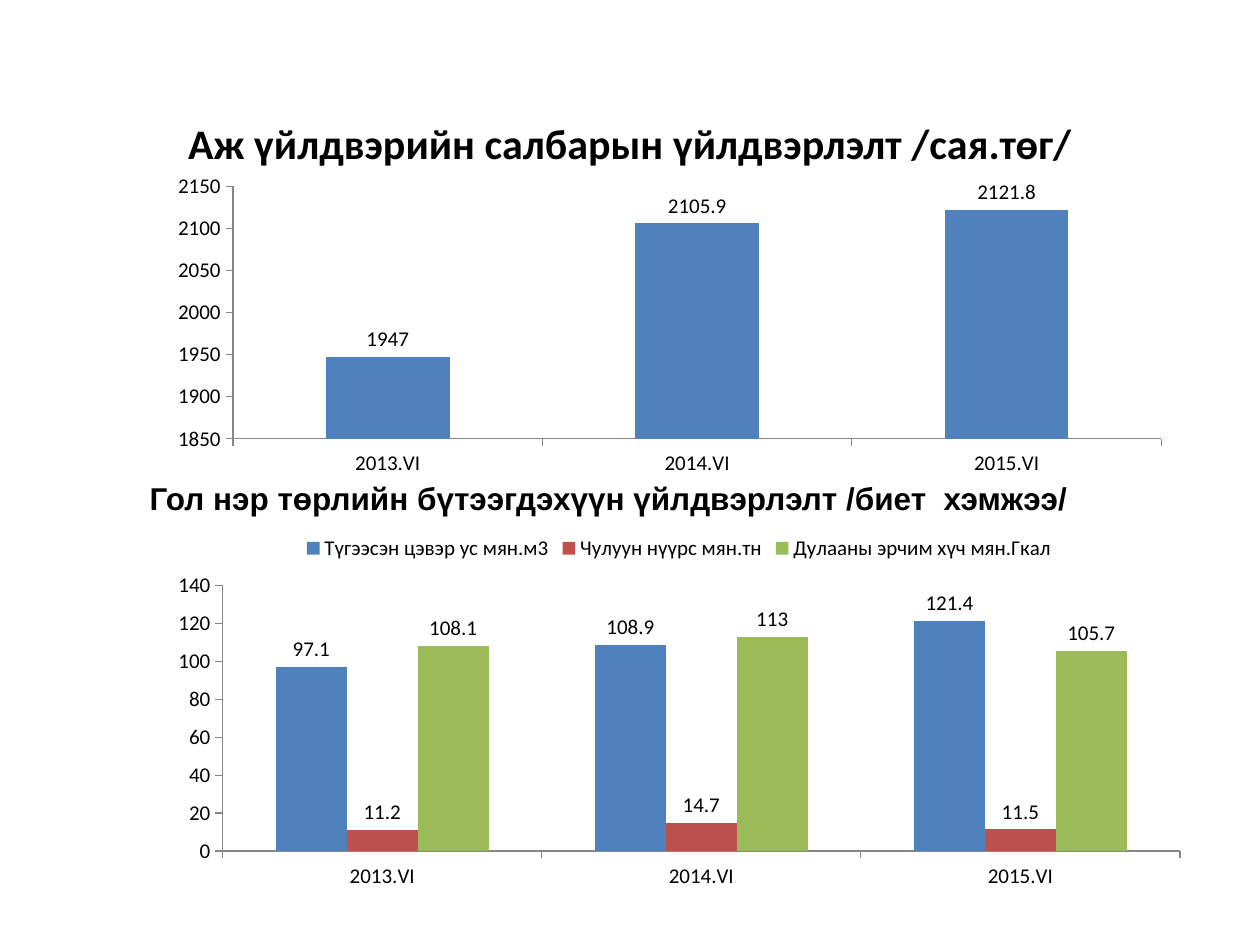
from dataclasses import dataclass

from pptx import Presentation
from pptx.chart.data import CategoryChartData
from pptx.dml.color import RGBColor
from pptx.enum.chart import (XL_CHART_TYPE, XL_LABEL_POSITION,
                             XL_LEGEND_POSITION, XL_TICK_MARK)
from pptx.enum.text import MSO_ANCHOR, PP_ALIGN
from pptx.util import Inches, Pt

COLUMNS = XL_CHART_TYPE.COLUMN_CLUSTERED
OUTSIDE_END = XL_LABEL_POSITION.OUTSIDE_END
LEGEND_TOP = XL_LEGEND_POSITION.TOP
TICK_OUT, TICK_NONE = XL_TICK_MARK.OUTSIDE, XL_TICK_MARK.NONE
TOP, MIDDLE = MSO_ANCHOR.TOP, MSO_ANCHOR.MIDDLE
LEFT, CENTER = PP_ALIGN.LEFT, PP_ALIGN.CENTER

BLACK = RGBColor(0x00, 0x00, 0x00)
AXIS_GRAY = RGBColor(0x86, 0x86, 0x86)
BLUE = RGBColor(0x4F, 0x81, 0xBD)
RED = RGBColor(0xC0, 0x50, 0x4D)
GREEN = RGBColor(0x9B, 0xBB, 0x59)

SLIDE_W, SLIDE_H = Inches(10), Inches(7.5)
PERIODS = ("2013.VI", "2014.VI", "2015.VI")


@dataclass(frozen=True)
class Box:
    """A place on the slide, in percent of its width and height."""
    x: float
    y: float
    w: float
    h: float

    def emu(self) -> tuple[int, int, int, int]:
        return (int(SLIDE_W * self.x / 100), int(SLIDE_H * self.y / 100),
                int(SLIDE_W * self.w / 100), int(SLIDE_H * self.h / 100))


@dataclass(frozen=True)
class Heading:
    text: str
    box: Box
    font: str
    size: int
    align: PP_ALIGN
    anchor: MSO_ANCHOR


@dataclass(frozen=True)
class Series:
    name: str
    values: tuple[float, ...]
    color: RGBColor


@dataclass(frozen=True)
class ColumnChart:
    box: Box
    series: tuple[Series, ...]
    scale: tuple[int, int, int]  # minimum, maximum, step
    legend: bool


HEADINGS = (
    Heading("Аж үйлдвэрийн салбарын үйлдвэрлэлт /сая.төг/",
            Box(5, 10.4, 90, 9.33), "Calibri", 24, CENTER, MIDDLE),
    Heading("Гол нэр төрлийн бүтээгдэхүүн үйлдвэрлэлт /биет  хэмжээ/",
            Box(10.9, 50, 86.7, 5.33), "Arial", 18, LEFT, TOP),
)

CHARTS = (
    ColumnChart(Box(12.5, 17.73, 81.3, 33.33),
                (Series("Series 1", (1947, 2105.9, 2121.8), BLUE),),
                (1850, 2150, 50), False),
    ColumnChart(Box(12.5, 55.2, 82.8, 39.6),
                (Series("Түгээсэн цэвэр ус мян.м3", (97.1, 108.9, 121.4), BLUE),
                 Series("Чулуун нүүрс мян.тн", (11.2, 14.7, 11.5), RED),
                 Series("Дулааны эрчим хүч мян.Гкал", (108.1, 113, 105.7), GREEN)),
                (0, 140, 20), True),
)


def set_font(font, name: str, size: int, bold: bool = False) -> None:
    for key, value in {"name": name, "size": Pt(size), "bold": bold}.items():
        setattr(font, key, value)
    font.color.rgb = BLACK


def add_heading(s, heading: Heading) -> None:
    tf = s.shapes.add_textbox(*heading.box.emu()).text_frame
    tf.word_wrap = True
    tf.vertical_anchor = heading.anchor
    p = tf.paragraphs[0]
    p.alignment = heading.align
    r = p.add_run()
    r.text = heading.text
    set_font(r.font, heading.font, heading.size, bold=True)


def style_axis(axis) -> None:
    axis.has_major_gridlines = False
    axis.major_tick_mark = TICK_OUT
    axis.minor_tick_mark = TICK_NONE
    axis.format.line.color.rgb = AXIS_GRAY
    axis.format.line.width = Pt(0.75)


def add_column_chart(s, spec_: ColumnChart) -> None:
    data = CategoryChartData(number_format="General")
    data.categories = PERIODS
    for series in spec_.series:
        data.add_series(series.name, series.values)
    chart = s.shapes.add_chart(COLUMNS, *spec_.box.emu(), data).chart
    chart.has_title = False
    set_font(chart.font, "Calibri", 12)

    # Legend
    chart.has_legend = spec_.legend
    if spec_.legend:
        chart.legend.position = LEGEND_TOP
        chart.legend.include_in_layout = False

    # Axes
    for axis in (chart.category_axis, chart.value_axis):
        style_axis(axis)
    keys = ("minimum_scale", "maximum_scale", "major_unit")
    for key, value in zip(keys, spec_.scale):
        setattr(chart.value_axis, key, value)

    # Columns and their values
    plot = chart.plots[0]
    plot.vary_by_categories = False
    plot.gap_width, plot.overlap = 150, 0
    for drawn, series in zip(plot.series, spec_.series):
        drawn.format.fill.solid()
        drawn.format.fill.fore_color.rgb = series.color
        drawn.data_labels.show_value = True
        drawn.data_labels.position = OUTSIDE_END


def main() -> None:
    prs = Presentation()
    prs.slide_width, prs.slide_height = SLIDE_W, SLIDE_H
    s = prs.slides.add_slide(prs.slide_layouts[6])
    for heading in HEADINGS:
        add_heading(s, heading)
    for chart in CHARTS:
        add_column_chart(s, chart)
    prs.save("out.pptx")


if __name__ == "__main__":
    main()
